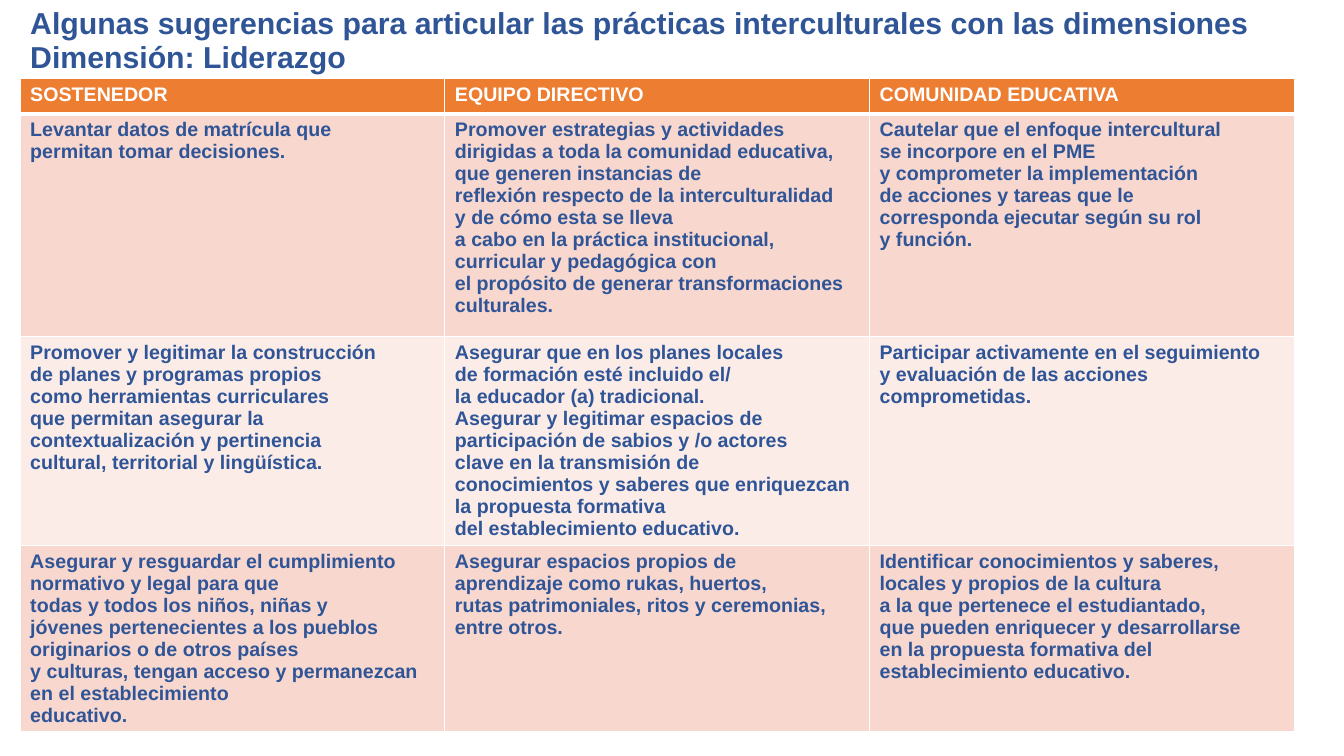
from dataclasses import dataclass

from lxml.etree import SubElement
from pptx import Presentation
from pptx.dml.color import RGBColor
from pptx.enum.text import MSO_ANCHOR, MSO_AUTO_SIZE, PP_ALIGN
from pptx.oxml.ns import qn
from pptx.util import Emu, Inches, Pt

WIDE, HIGH = Inches(13.33), Inches(7.5)
BLUE, WHITE, ORANGE = "2F5597", "FFFFFF", "ED7D31"
DARK, LIGHT = "F8D7CE", "FCECE8"
COL = 31.6


@dataclass
class Band:
    """A table row: height in percent of the slide, colours, rules and texts."""
    high: float
    fill: str
    ink: str
    top: float
    base: float
    cells: tuple[str, ...]


BANDS = [
    Band(4.67, ORANGE, WHITE, 1, 3,
         ("SOSTENEDOR", "EQUIPO DIRECTIVO", "COMUNIDAD EDUCATIVA")),
    Band(29.47, DARK, BLUE, 3, 1, (
        """Levantar datos de matrícula que
permitan tomar decisiones.""",
        """Promover estrategias y actividades
dirigidas a toda la comunidad educativa,
que generen instancias de
reflexión respecto de la interculturalidad
y de cómo esta se lleva
a cabo en la práctica institucional,
curricular y pedagógica con
el propósito de generar transformaciones
culturales.""",
        """Cautelar que el enfoque intercultural
se incorpore en el PME
y comprometer la implementación
de acciones y tareas que le
corresponda ejecutar según su rol
y función.""")),
    Band(27.6, LIGHT, BLUE, 1, 1, (
        """Promover y legitimar la construcción
de planes y programas propios
como herramientas curriculares
que permitan asegurar la
contextualización y pertinencia
cultural, territorial y lingüística.""",
        """Asegurar que en los planes locales
de formación esté incluido el/
la educador (a) tradicional.
Asegurar y legitimar espacios de
participación de sabios y /o actores
clave en la transmisión de
conocimientos y saberes que enriquezcan
la propuesta formativa
del establecimiento educativo.""",
        """Participar activamente en el seguimiento
y evaluación de las acciones
comprometidas.""")),
    Band(24.6, DARK, BLUE, 1, 1, (
        """Asegurar y resguardar el cumplimiento
normativo y legal para que
todas y todos los niños, niñas y
jóvenes pertenecientes a los pueblos
originarios o de otros países
y culturas, tengan acceso y permanezcan
en el establecimiento
educativo.""",
        """Asegurar espacios propios de
aprendizaje como rukas, huertos,
rutas patrimoniales, ritos y ceremonias,
entre otros.""",
        """Identificar conocimientos y saberes,
locales y propios de la cultura
a la que pertenece el estudiantado,
que pueden enriquecer y desarrollarse
en la propuesta formativa del
establecimiento educativo.""")),
]


def color(code: str) -> RGBColor:
    """Turn a hex string into a colour."""
    return RGBColor.from_string(code)


def across(share: float) -> Emu:
    """Give a percentage of the slide's width."""
    return Emu(round(WIDE * share / 100))


def down(share: float) -> Emu:
    """Give a percentage of the slide's height."""
    return Emu(round(HIGH * share / 100))


def apply(item, values: dict) -> None:
    """Set every attribute named in the format values."""
    for name, value in values.items():
        setattr(item, name, value)


def write(frame, text: str, size: float, ink: str, lead: float) -> None:
    """Fill a text frame and format its paragraphs."""
    frame.text = text
    for par in frame.paragraphs:
        apply(par, {"alignment": PP_ALIGN.LEFT, "line_spacing": lead})
        for run in par.runs:
            apply(run.font, {"name": "Arial", "size": Pt(size), "bold": True})
            run.font.color.rgb = color(ink)


def rule(cell, side: str, width: float) -> None:
    """Draw one white border of a cell."""
    line = SubElement(cell._tc.get_or_add_tcPr(), qn(f"a:ln{side}"), w=str(Pt(width)))
    paint = SubElement(line, qn("a:solidFill"))
    SubElement(paint, qn("a:srgbClr"), val=WHITE)


def head(slide) -> None:
    """Place and write the title."""
    title = slide.shapes.title
    apply(title, {"left": across(1.5), "top": down(0.5),
                  "width": across(95.3), "height": down(9.9)})
    frame = title.text_frame
    apply(frame, {"auto_size": MSO_AUTO_SIZE.NONE, "word_wrap": True,
                  "vertical_anchor": MSO_ANCHOR.MIDDLE})
    write(frame, "Algunas sugerencias para articular las prácticas interculturales "
          "con las dimensiones\vDimensión: Liderazgo", 21.6, BLUE, 0.95)


def grid(slide, bands: list[Band]) -> None:
    """Draw the table from its bands."""
    count = len(bands[0].cells)
    table = slide.shapes.add_table(
        len(bands), count, across(1.5), down(10.4), across(COL * count),
        down(sum(band.high for band in bands))).table
    for col in table.columns:
        col.width = across(COL)
    for row, band in zip(table.rows, bands):
        row.height = down(band.high)
        for cell, text in zip(row.cells, band.cells):
            write(cell.text_frame, text, 14, band.ink, 1.0)
            for side, width in zip("LRTB", (1, 1, band.top, band.base)):
                rule(cell, side, width)
            cell.fill.solid()
            cell.fill.fore_color.rgb = color(band.fill)


def main() -> None:
    """Build the slide and save it."""
    deck = Presentation()
    apply(deck, {"slide_width": WIDE, "slide_height": HIGH})
    slide = deck.slides.add_slide(deck.slide_layouts[5])
    head(slide)
    grid(slide, BANDS)
    deck.save("out.pptx")


if __name__ == "__main__":
    main()
